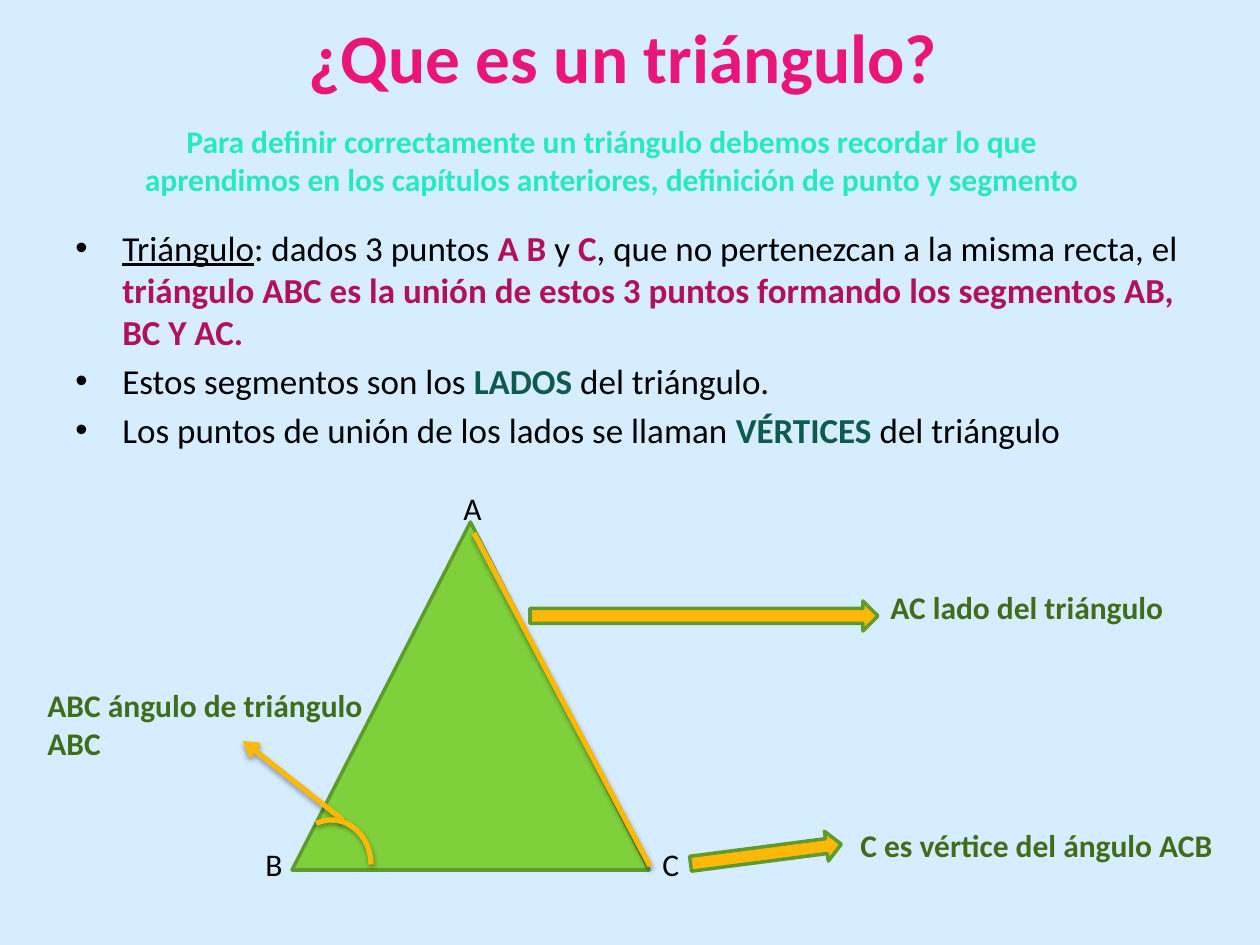
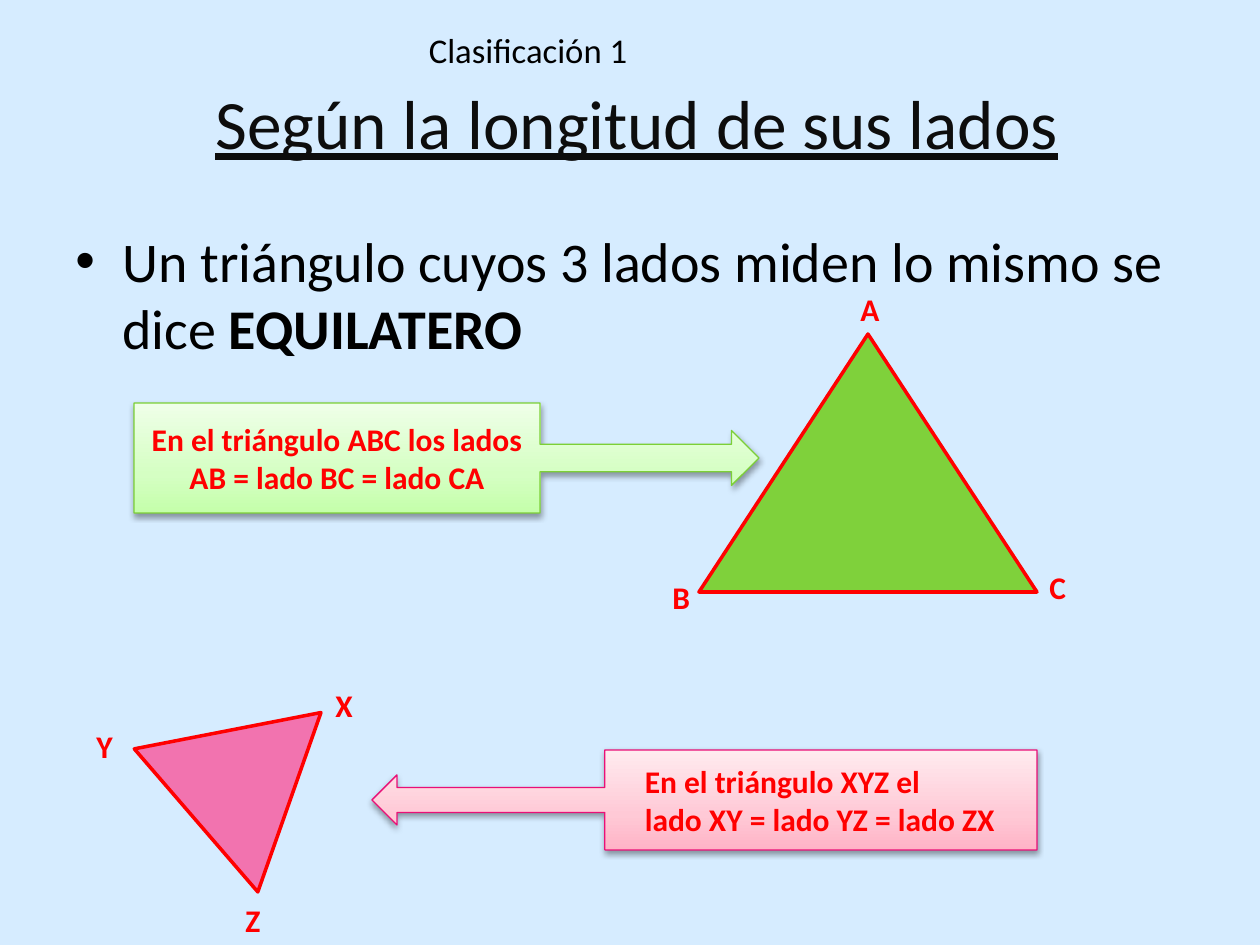
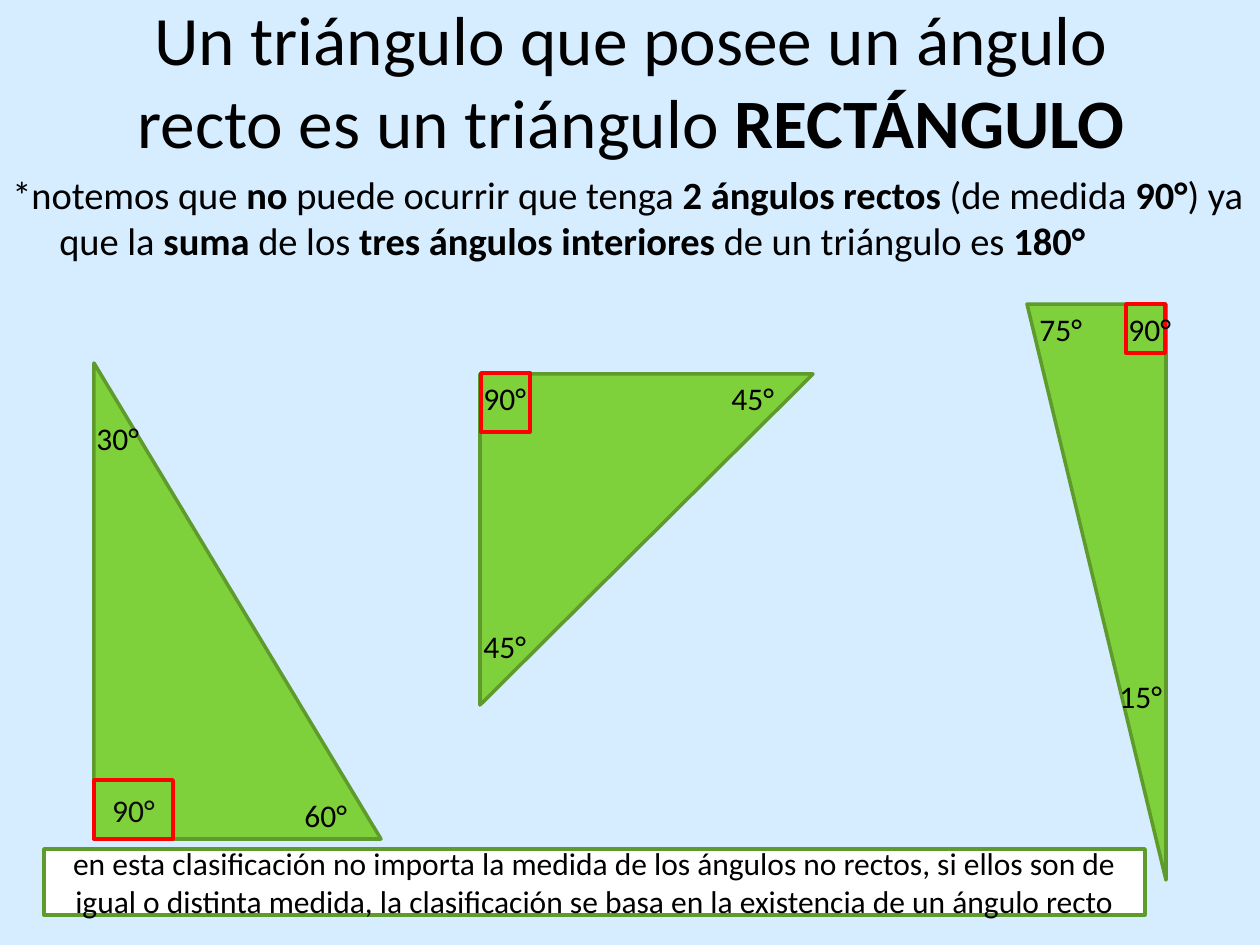
import copy
import lxml.etree
import pptx
import pptx.dml.color
import pptx.enum.shapes
import pptx.enum.text
import pptx.oxml.ns
import pptx.util

RGB = pptx.dml.color.RGBColor
SHAPE = pptx.enum.shapes.MSO_SHAPE
ALIGN = pptx.enum.text.PP_ALIGN
MIDDLE = pptx.enum.text.MSO_ANCHOR.MIDDLE
qn = pptx.oxml.ns.qn

PX = 914400 / 126
FONT = "Calibri"
SKY = RGB(0xD6, 0xEC, 0xFF)
BLACK = RGB(0, 0, 0)
INK = RGB(0x0D, 0x0D, 0x0D)
WHITE = RGB(0xFF, 0xFF, 0xFF)
RED = RGB(0xFF, 0, 0)
MAGENTA = RGB(0xEA, 0x15, 0x7A)
BERRY = RGB(0xB0, 0x10, 0x5C)
PINK = RGB(0xF2, 0x73, 0xAF)
PINK_EDGE = RGB(0xEA, 0x0F, 0x77)
MINT = RGB(0x26, 0xE8, 0xC5)
TEAL = RGB(0x0D, 0x5A, 0x4F)
GREEN = RGB(0x7F, 0xD1, 0x3B)
GREEN_EDGE = RGB(0x5E, 0x9B, 0x2C)
LIME_EDGE = RGB(0x7C, 0xD0, 0x36)
DARK_GREEN = RGB(0x3F, 0x6D, 0x19)
AMBER = RGB(0xFE, 0xB8, 0x0A)
LIME_STOPS = [RGB(0xC4, 0xFF, 0xAA), RGB(0xD5, 0xFF, 0xC3), RGB(0xEF, 0xFF, 0xE8)]
ROSE_STOPS = [RGB(0xFF, 0xB3, 0xC6), RGB(0xFF, 0xC9, 0xD6), RGB(0xFF, 0xEB, 0xEF)]

PLAIN = {}
BOLD = {"bold": True}
KEY = {"bold": True, "color": BERRY}
TERM = {"bold": True, "color": TEAL}
CENTER = {"alignment": ALIGN.CENTER}
TITLE = {"vertical_anchor": MIDDLE}
LABEL = {"word_wrap": False}
INDENT = round(47 * PX)


def add_shape(s, kind, box, fill=None, line=None, width=2, rot=0):
    """Add a preset shape, or a text box when kind is None."""
    x, y, w, h = [round(v * PX) for v in box]
    if kind is None:
        return s.shapes.add_textbox(x, y, w, h)
    sp = s.shapes.add_shape(kind, x, y, w, h)
    sp.shadow.inherit = False
    sp.rotation = rot
    if fill is None:
        sp.fill.background()
    else:
        sp.fill.solid()
        sp.fill.fore_color.rgb = fill
    sp.line.color.rgb = line
    sp.line.width = pptx.util.Pt(width)
    return sp


def write(sp, paras, size, base=PLAIN, para=PLAIN, frame=PLAIN, bullet=None):
    """Fill a shape with paragraphs, each a list of (text, format) runs."""
    tf = sp.text_frame
    for name, value in {"word_wrap": True, **frame}.items():
        setattr(tf, name, value)
    for i, runs in enumerate(paras):
        p = tf.add_paragraph() if i else tf.paragraphs[0]
        for name, value in {"alignment": ALIGN.LEFT, **para}.items():
            setattr(p, name, value)
        if bullet is not None:
            pPr = p._p.get_or_add_pPr()
            pPr.set("marL", str(INDENT))
            pPr.set("indent", str(-INDENT))
            if bullet:
                lxml.etree.SubElement(pPr, qn("a:buFont")).set("typeface", "Arial")
                lxml.etree.SubElement(pPr, qn("a:buChar")).set("char", bullet)
        for text, own in runs:
            r = p.add_run()
            r.text = text
            fmt = {"name": FONT, "size": pptx.util.Pt(size), "color": BLACK, **base, **own}
            r.font.color.rgb = fmt.pop("color")
            for name, value in fmt.items():
                setattr(r.font, name, value)


prs = pptx.Presentation()
prs.slide_width = pptx.util.Inches(10)
prs.slide_height = pptx.util.Inches(7.5)
prs.slide_master.background.fill.solid()
prs.slide_master.background.fill.fore_color.rgb = SKY
s1, s2, s3 = [prs.slides.add_slide(prs.slide_layouts[6]) for _ in range(3)]

# Titles
titles = [
    (s1, (64, 26, 1134, 60), [("¿Que es un triángulo? ", {"bold": True, "color": MAGENTA})]),
    (s2, (70, 80, 1134, 84), [("Según la longitud de sus lados", {"underline": True, "color": INK})]),
    (s3, (64, 0, 1134, 158), [("Un triángulo que posee un ángulo recto es un triángulo ", PLAIN),
                              ("RECTÁNGULO", BOLD)]),
]
for s, box, runs in titles:
    write(add_shape(s, None, box), [runs], 39.6, para=CENTER, frame=TITLE)
write(add_shape(s2, None, (378, 25, 300, 50)), [[("Clasificación 1", PLAIN)]],
      19.8, para=CENTER, frame=TITLE)

# Body texts
bodies = [
    (s1, (63, 220, 1134, 624), 20, "•", [
        [("Triángulo", {"underline": True}), (": dados 3 puntos ", PLAIN), ("A B ", KEY),
         ("y ", PLAIN), ("C", KEY), (", que no pertenezcan a la misma recta, el ", PLAIN),
         ("triángulo ABC es la unión de estos 3 puntos formando los segmentos AB, BC Y AC.", KEY)],
        [("Estos segmentos son los ", PLAIN), ("LADOS", TERM), (" del triángulo.", PLAIN)],
        [("Los puntos de unión de los lados se llaman ", PLAIN), ("VÉRTICES ", TERM),
         ("del triángulo", PLAIN)]]),
    (s2, (63, 220, 1134, 624), 32, "•", [
        [("Un triángulo cuyos 3 lados miden lo mismo se dice ", PLAIN), ("EQUILATERO", BOLD)]]),
    (s3, (0, 165, 1260, 110), 22, "", [
        [("*notemos que ", PLAIN), ("no", BOLD), (" puede ocurrir que tenga ", PLAIN),
         ("2 ángulos rectos ", BOLD), ("(de medida ", PLAIN), ("90°", BOLD),
         (") ya que la ", PLAIN), ("suma", BOLD), (" de los ", PLAIN),
         ("tres ángulos interiores", BOLD), (" de un triángulo es ", PLAIN), ("180°", BOLD)]]),
]
for s, box, size, bullet, paras in bodies:
    write(add_shape(s, None, box), paras, size, bullet=bullet,
          para={"space_before": pptx.util.Pt(size * 0.2)})
intro = ("Para definir correctamente un triángulo debemos recordar lo que aprendimos "
         "en los capítulos anteriores, definición de punto y segmento")
write(add_shape(s1, None, (115, 116, 994, 89)), [[(intro, PLAIN)]], 18,
      {"bold": True, "color": MINT}, CENTER)

# Triangles, block arrows and right-angle marks
figures = [
    (s1, SHAPE.ISOSCELES_TRIANGLE, (292, 522, 357, 348), GREEN, GREEN_EDGE, 0),
    (s1, SHAPE.RIGHT_ARROW, (530, 601, 348, 30), AMBER, GREEN_EDGE, 0),
    (s1, SHAPE.RIGHT_ARROW, (690, 839, 152, 30), AMBER, GREEN_EDGE, 352.6),
    (s2, SHAPE.ISOSCELES_TRIANGLE, (699, 334, 338, 258), GREEN, RED, 0),
    (s2, SHAPE.ISOSCELES_TRIANGLE, (164, 684, 189, 165), PINK, RED, 49.2),
    (s3, SHAPE.RIGHT_TRIANGLE, (94, 363, 287, 476), GREEN, GREEN_EDGE, 0),
    (s3, SHAPE.RIGHT_TRIANGLE, (481, 373, 331, 333), GREEN, GREEN_EDGE, 90),
    (s3, SHAPE.RIGHT_TRIANGLE, (1027, 304, 139, 576), GREEN, GREEN_EDGE, 180),
    (s3, SHAPE.RECTANGLE, (481, 373, 49, 59), GREEN, RED, 0),
    (s3, SHAPE.RECTANGLE, (1126, 304, 39, 49), GREEN, RED, 0),
]
for s, kind, box, fill, line, rot in figures:
    add_shape(s, kind, box, fill, line, rot=rot)

# Boxed texts of the right-angle slide
note = ("en esta clasificación no importa la medida de los ángulos no rectos, si ellos son de "
        "igual o distinta medida, la clasificación se basa en la existencia de un ángulo recto")
for box, fill, line, text, color in [((94, 780, 79, 59), GREEN, RED, "90°", INK),
                                     ((44, 849, 1101, 66), WHITE, GREEN_EDGE, note, BLACK)]:
    sp = add_shape(s3, SHAPE.RECTANGLE, box, fill, line)
    write(sp, [[(text, PLAIN)]], 18, {"color": color}, CENTER, TITLE)

# Marked side, angle arc and angle arrow
shadowed = []
for x1, y1, x2, y2, head in [(474, 533, 650, 866, False), (343, 820, 243, 741, True)]:
    cn = s1.shapes.add_connector(pptx.enum.shapes.MSO_CONNECTOR.STRAIGHT,
                                 *[round(v * PX) for v in (x1, y1, x2, y2)])
    cn.line.color.rgb = AMBER
    cn.line.width = pptx.util.Pt(3)
    if head:
        lxml.etree.SubElement(cn.line._get_or_add_ln(), qn("a:tailEnd")).set("type", "arrow")
    lxml.etree.SubElement(cn._element.spPr, qn("a:effectLst"))
    shadowed.append(cn)
arc = add_shape(s1, SHAPE.ARC, (292, 820, 79, 89), None, AMBER, 3)
arc.adjustments[0] = 149.79
arc.adjustments[1] = 0
shadowed.append(arc)

# Gradient callouts
callouts = [
    (SHAPE.RIGHT_ARROW_CALLOUT, (134, 403, 625, 110), LIME_STOPS, LIME_EDGE, CENTER, TITLE,
     ["En el triángulo ABC los lados AB = lado BC = lado CA"]),
    (SHAPE.LEFT_ARROW_CALLOUT, (372, 750, 665, 100), ROSE_STOPS, PINK_EDGE, PLAIN,
     {**TITLE, "margin_left": round(40 * PX)},
     ["En el triángulo XYZ el", "lado XY = lado YZ = lado ZX"]),
]
for kind, box, colors, line, para, frame, lines in callouts:
    sp = add_shape(s2, kind, box, WHITE, line, 0.75)
    sp.fill.gradient()
    sp.fill.gradient_angle = 90
    stops = sp._element.spPr.find(".//" + qn("a:gsLst"))
    stops.append(copy.deepcopy(stops[0]))
    for stop, color, position in zip(sp.fill.gradient_stops, colors, (0, 0.35, 1)):
        stop.color.rgb = color
        stop.position = position
    write(sp, [[(text, PLAIN)] for text in lines], 18, {"bold": True, "color": RED}, para, frame)
    shadowed.append(sp)

# Soft shadows
for sp in shadowed:
    effects = sp._element.spPr.find(qn("a:effectLst"))
    shadow = lxml.etree.SubElement(effects, qn("a:outerShdw"))
    for name, value in {"blurRad": 40000, "dist": 22000, "dir": 5400000, "rotWithShape": 0}.items():
        shadow.set(name, str(value))
    black = lxml.etree.SubElement(shadow, qn("a:srgbClr"))
    black.set("val", "000000")
    lxml.etree.SubElement(black, qn("a:alpha")).set("val", "36000")

# Labels: vertices, sides and angles
label_groups = [
    (s1, PLAIN, 44, [("A", 451, 483), ("B", 253, 839), ("C", 650, 839)]),
    (s1, {"bold": True, "color": DARK_GREEN}, 301, [("AC lado del triángulo", 878, 582)]),
    (s1, {"bold": True, "color": DARK_GREEN}, 381, [("C es vértice del ángulo ACB", 848, 820)]),
    (s2, {"bold": True, "color": RED}, 43, [("A", 848, 284), ("B", 660, 572), ("C", 1037, 562),
                                            ("X", 323, 680), ("Y", 84, 721), ("Z", 233, 895)]),
    (s3, PLAIN, 68, [("30°", 84, 413), ("60°", 292, 790), ("90°", 471, 373), ("45°", 471, 621),
                     ("45°", 719, 373), ("75°", 1027, 304), ("15°", 1107, 671),
                     ("90°", 1116, 304)]),
]
for s, base, width, labels in label_groups:
    for text, x, y in labels:
        write(add_shape(s, None, (x, y, width, 50)), [[(text, PLAIN)]], 18, base, frame=LABEL)
write(add_shape(s1, None, (35, 680, 353, 89)), [[("ABC ángulo de triángulo ABC", PLAIN)]],
      18, {"bold": True, "color": DARK_GREEN})

prs.save("out.pptx")
